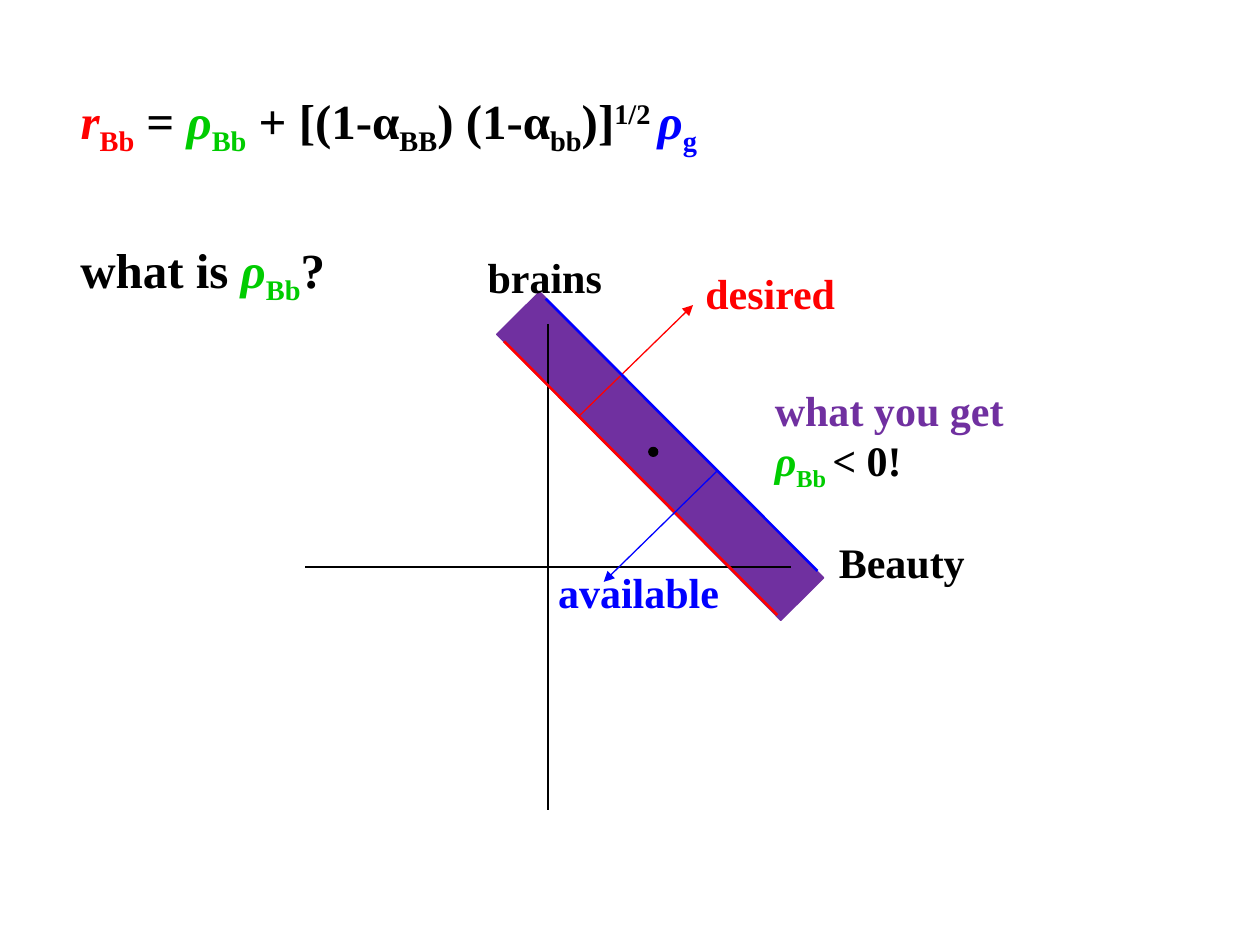
from lxml import etree
from pptx import Presentation
from pptx.dml.color import RGBColor
from pptx.enum.shapes import MSO_CONNECTOR, MSO_SHAPE
from pptx.enum.text import MSO_ANCHOR, MSO_AUTO_SIZE, PP_ALIGN
from pptx.oxml.ns import qn
from pptx.util import Cm, Pt

STRAIGHT = MSO_CONNECTOR.STRAIGHT
RECT, OVAL = MSO_SHAPE.RECTANGLE, MSO_SHAPE.OVAL
TOP, LEFT = MSO_ANCHOR.TOP, PP_ALIGN.LEFT
FIT = MSO_AUTO_SIZE.SHAPE_TO_FIT_TEXT
FONT = "Times New Roman"
BLACK, RED, GREEN, BLUE, PURPLE = "000000", "FF0000", "00CC00", "0000FF", "7030A0"
SUB, SUP = -25000, 30000


def rgb(value):
    return RGBColor.from_string(value)


def write(tf, size, paragraphs, wrap=False):
    """Fill a text frame with runs of (text, colour, baseline); rho and r are italic."""
    tf.word_wrap = wrap
    tf.auto_size = FIT
    tf.vertical_anchor = TOP
    for i, runs in enumerate(paragraphs):
        p = tf.add_paragraph() if i else tf.paragraphs[0]
        p.alignment = LEFT
        for text, colour, baseline in runs:
            r = p.add_run()
            r.text = text
            r.font.name, r.font.size, r.font.bold = FONT, Pt(size), True
            r.font.italic = text in ("r", "ρ")
            r.font.color.rgb = rgb(colour)
            if baseline:
                r.font._element.set("baseline", str(baseline))


prs = Presentation()
prs.slide_width, prs.slide_height = Cm(25.4), Cm(19.05)
s = prs.slides.add_slide(prs.slide_layouts[5])

# Equation as title
title = s.shapes.title
title.left, title.top, title.width, title.height = Cm(1.37), Cm(1.7), Cm(14.66), Cm(1.45)
write(title.text_frame, 28, [[
    ("r", RED, 0), ("Bb", RED, SUB), (" = ", BLACK, 0),
    ("ρ", GREEN, 0), ("Bb", GREEN, SUB),
    (" + [(1-α", BLACK, 0), ("BB", BLACK, SUB),
    (") (1-α", BLACK, 0), ("bb", BLACK, SUB),
    (")]", BLACK, 0), ("1/2 ", BLACK, SUP),
    ("ρ", BLUE, 0), ("g", BLUE, SUB),
]], wrap=True)

# Tilted selection band and its centre point
shapes = [
    (RECT, 12.7, 5.13, 1.22, 8.13, 315.2, PURPLE),
    (OVAL, 13.08, 9.02, 0.18, 0.18, 0, BLACK),
]
for kind, x, y, w, h, angle, colour in shapes:
    sp = s.shapes.add_shape(kind, Cm(x), Cm(y), Cm(w), Cm(h))
    sp.rotation = angle
    sp.shadow.inherit = False
    sp.fill.solid()
    sp.fill.fore_color.rgb = rgb(colour)
    sp.line.color.rgb = rgb(colour)
    sp.line.width = Pt(0.75)

# Axes, band edges and arrows
lines = [
    (6.15, 11.43, 15.95, 11.43, BLACK, False),
    (11.05, 6.53, 11.05, 16.33, BLACK, False),
    (10.16, 6.88, 15.67, 12.4, RED, False),
    (11.68, 8.38, 13.97, 6.15, RED, True),
    (11, 6.02, 16.48, 11.51, BLUE, False),
    (14.45, 9.5, 12.17, 11.73, BLUE, True),
]
for x1, y1, x2, y2, colour, arrow in lines:
    c = s.shapes.add_connector(STRAIGHT, Cm(x1), Cm(y1), Cm(x2), Cm(y2))
    c.line.color.rgb = rgb(colour)
    c.line.width = Pt(0.75 if arrow else 1.5)
    if arrow:
        etree.SubElement(c.line._get_or_add_ln(), qn("a:tailEnd"), type="triangle")
    etree.SubElement(c._element.spPr, qn("a:effectLst"))

# Question, axis names and labels
labels = [
    (1.37, 4.7, 5.64, 1.45, 28, [[("what is ", BLACK, 0), ("ρ", GREEN, 0),
                                  ("Bb", GREEN, SUB), ("?", BLACK, 0)]]),
    (16.66, 10.69, 3.07, 1.27, 24, [[("Beauty", BLACK, 0)]]),
    (9.58, 4.95, 2.84, 1.27, 24, [[("brains", BLACK, 0)]]),
    (13.97, 5.26, 3.15, 1.27, 24, [[("desired", RED, 0)]]),
    (11, 11.3, 3.78, 1.27, 24, [[("available", BLUE, 0)]]),
    (15.37, 7.62, 5.18, 2.31, 24, [[("what you get", PURPLE, 0)],
                                   [("ρ", GREEN, 0), ("Bb ", GREEN, SUB),
                                    ("< 0!", BLACK, 0)]]),
]
for x, y, w, h, size, paragraphs in labels:
    tb = s.shapes.add_textbox(Cm(x), Cm(y), Cm(w), Cm(h))
    write(tb.text_frame, size, paragraphs)

prs.save("out.pptx")
